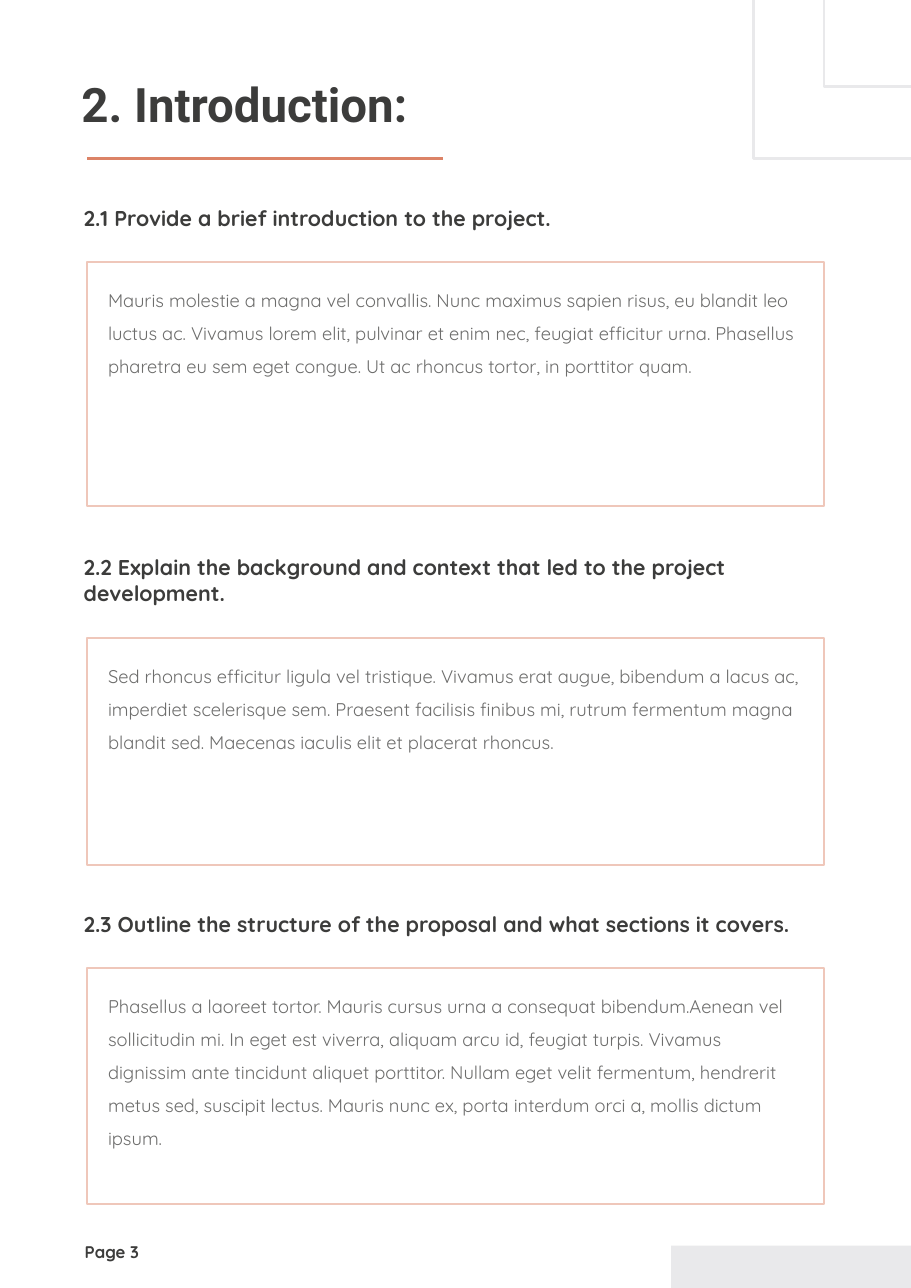
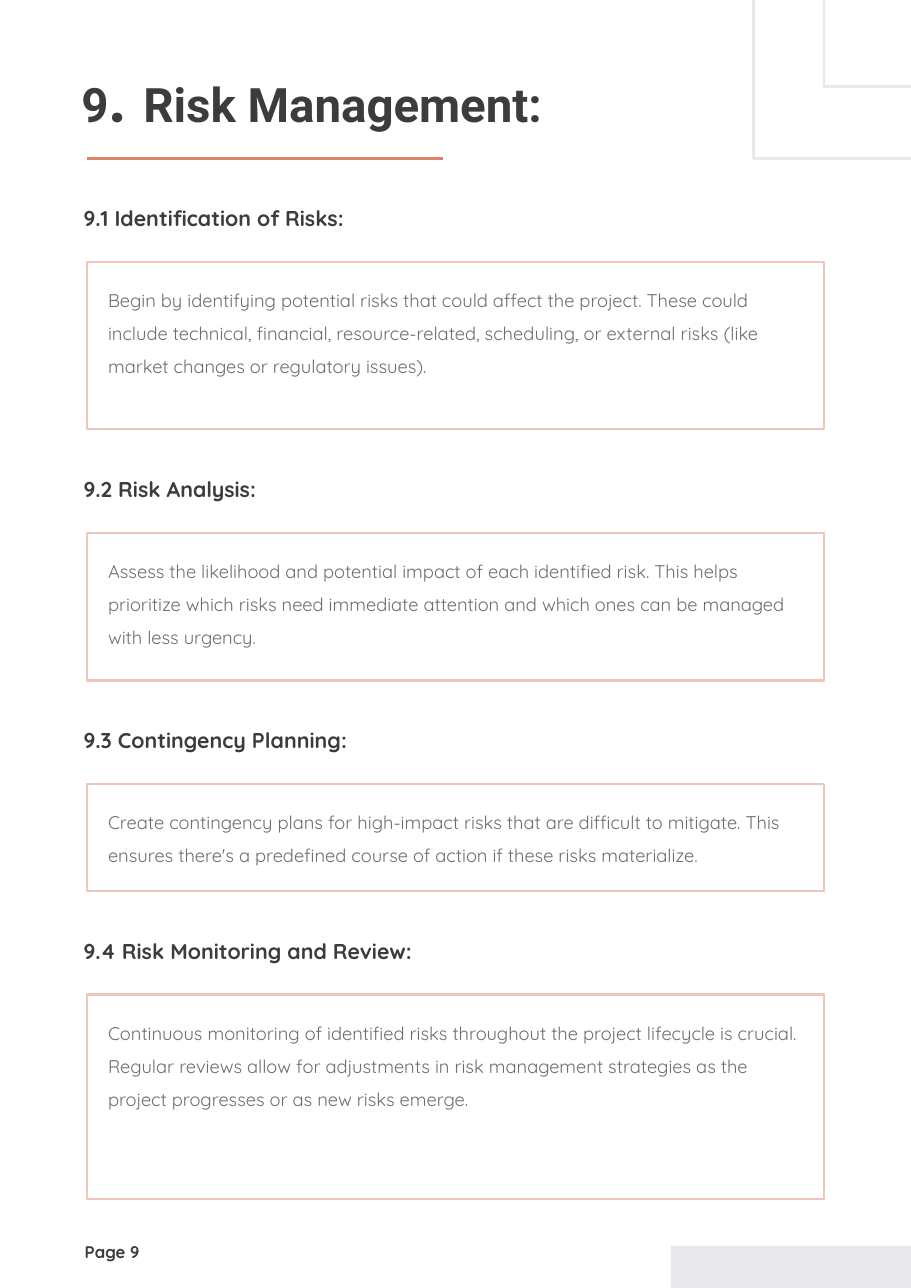
from pptx import Presentation
from pptx.dml.color import RGBColor as RGB
from pptx.enum.shapes import MSO_CONNECTOR as CONN, MSO_SHAPE as SHAPE
from pptx.enum.text import MSO_AUTO_SIZE as AUTO
from pptx.oxml.ns import qn
from pptx.util import Pt
from lxml import etree

W, H = 595.44, 841.68
C = {"dark": "3C3C3B", "body": "6D6D6C", "accent": "DC8367",
     "frame": "EFC7BA", "grey": "E9E9EB"}

# Text formats
TITLE = {"name": "Roboto", "size": Pt(31), "bold": True}
HEADING = {"name": "Quicksand", "size": Pt(14), "bold": True}
BODY = {"name": "Quicksand", "size": Pt(12), "bold": False}
FOOTER = {"name": "Quicksand", "size": Pt(11), "bold": True}

# Section layout
HEAD_X, HEAD_W, HEAD_LINE = 54.7, 484, 17.5
BOX_X, BOX_W, BOX_GAP = 56.9, 481.7, 37.2
BODY_X, BODY_W, BODY_INSET = 70.6, 452.9, 10.7

# Each section: heading top, box height, heading, body text
PAGES = [
    {"number": 3, "title_top": 49, "title_height": 37.4,
     "title": [("2. Introduction:", 31)],
     "sections": [
         (133.9, 159.8, "2.1 Provide a brief introduction to the project.",
          "Mauris molestie a magna vel convallis. Nunc maximus sapien risus, eu "
          "blandit leo luctus ac. Vivamus lorem elit, pulvinar et enim nec, feugiat "
          "efficitur urna. Phasellus pharetra eu sem eget congue. Ut ac rhoncus "
          "tortor, in porttitor quam."),
         (362.2, 148.3, "2.2 Explain the background and context that led to the "
          "project\ndevelopment.",
          "Sed rhoncus efficitur ligula vel tristique. Vivamus erat augue, bibendum "
          "a lacus ac, imperdiet scelerisque sem. Praesent facilisis finibus mi, "
          "rutrum fermentum magna blandit sed. Maecenas iaculis elit et placerat "
          "rhoncus."),
         (595.4, 154.1, "2.3 Outline the structure of the proposal and what "
          "sections it covers.",
          "Phasellus a laoreet tortor. Mauris cursus urna a consequat "
          "bibendum.Aenean vel sollicitudin mi. In eget est viverra, aliquam arcu "
          "id, feugiat turpis. Vivamus dignissim ante tincidunt aliquet porttitor. "
          "Nullam eget velit fermentum, hendrerit metus sed, suscipit lectus. "
          "Mauris nunc ex, porta interdum orci a, mollis dictum ipsum."),
     ]},
    {"number": 9, "title_top": 38.2, "title_height": 51.1,
     "title": [("9", 31), (". ", 42), ("Risk Management:", 31)],
     "sections": [
         (133.9, 109.4, "9.1 Identification of Risks:",
          "Begin by identifying potential risks that could affect the project. "
          "These could include technical, financial, resource-related, scheduling, "
          "or external risks (like market changes or regulatory issues)."),
         (311, 96.5, "9.2 Risk Analysis:",
          "Assess the likelihood and potential impact of each identified risk. This "
          "helps prioritize which risks need immediate attention and which ones can "
          "be managed with less urgency."),
         (475.2, 69.8, "9.3 Contingency Planning:",
          "Create contingency plans for high-impact risks that are difficult to "
          "mitigate. This ensures there's a predefined course of action if these "
          "risks materialize."),
         (612.7, 133.9, "9.4 Risk Monitoring and Review:",
          "Continuous monitoring of identified risks throughout the project "
          "lifecycle is crucial. Regular reviews allow for adjustments in risk "
          "management strategies as the project progresses or as new risks emerge."),
     ]},
]


def add_text(s, x, y, w, h, text, fmt, color, spacing=1.0):
    """Add a borderless text box, one paragraph per line of text."""
    tf = s.shapes.add_textbox(Pt(x), Pt(y), Pt(w), Pt(h)).text_frame
    tf.margin_left = tf.margin_top = tf.margin_right = tf.margin_bottom = 0
    tf.word_wrap = True
    tf.auto_size = AUTO.SHAPE_TO_FIT_TEXT
    for i, line in enumerate(text.split("\n")):
        p = tf.paragraphs[0] if i == 0 else tf.add_paragraph()
        p.line_spacing = spacing
        if line:
            add_run(p, line, fmt, color)
    return tf


def add_run(p, text, fmt, color):
    r = p.add_run()
    r.text = text
    for key, value in fmt.items():
        setattr(r.font, key, value)
    r.font.color.rgb = RGB.from_string(C[color])


prs = Presentation()
prs.slide_width, prs.slide_height = Pt(W), Pt(H)

for page in PAGES:
    s = prs.slides.add_slide(prs.slide_layouts[6])

    # Title and rule below it
    tf = add_text(s, 53.3, page["title_top"], HEAD_W, page["title_height"],
                  "", TITLE, "dark")
    for text, size in page["title"]:
        add_run(tf.paragraphs[0], text, {**TITLE, "size": Pt(size)}, "dark")
    rule = s.shapes.add_connector(CONN.STRAIGHT, Pt(56.9), Pt(103.7),
                                  Pt(289.4), Pt(103.7))
    rule.line.color.rgb = RGB.from_string(C["accent"])
    rule.line.width = Pt(2.25)
    etree.SubElement(rule._element.spPr, qn("a:effectLst"))

    # Sections
    for top, height, heading, body in page["sections"]:
        extra = HEAD_LINE * heading.count("\n")
        box_top = top + BOX_GAP + extra
        add_text(s, HEAD_X, top, HEAD_W, HEAD_LINE + extra, heading, HEADING, "dark")
        box = s.shapes.add_shape(SHAPE.RECTANGLE, Pt(BOX_X), Pt(box_top),
                                 Pt(BOX_W), Pt(height))
        box.shadow.inherit = False
        box.fill.background()
        box.line.color.rgb = RGB.from_string(C["frame"])
        box.line.width = Pt(1.5)
        add_text(s, BODY_X, box_top + BODY_INSET, BODY_W, 58, body, BODY, "body", 1.5)

    # Footer
    add_text(s, 55.4, 811.4, 100, 13.7, f"Page {page['number']}", FOOTER, "dark")
    band = s.shapes.add_shape(SHAPE.RECTANGLE, Pt(438.7), Pt(814),
                              Pt(W - 438.7), Pt(H - 814))
    band.shadow.inherit = False
    band.fill.solid()
    band.fill.fore_color.rgb = RGB.from_string(C["grey"])
    band.line.fill.background()

    # Corner brackets
    for left, bottom in [(492.6, 103.5), (538.7, 56.6)]:
        fb = s.shapes.build_freeform(Pt(left), 0)
        fb.add_line_segments([(Pt(left), Pt(bottom)), (Pt(W), Pt(bottom))],
                             close=False)
        bracket = fb.convert_to_shape()
        bracket.shadow.inherit = False
        bracket.fill.background()
        bracket.line.color.rgb = RGB.from_string(C["grey"])
        bracket.line.width = Pt(1.5)

prs.save("out.pptx")
